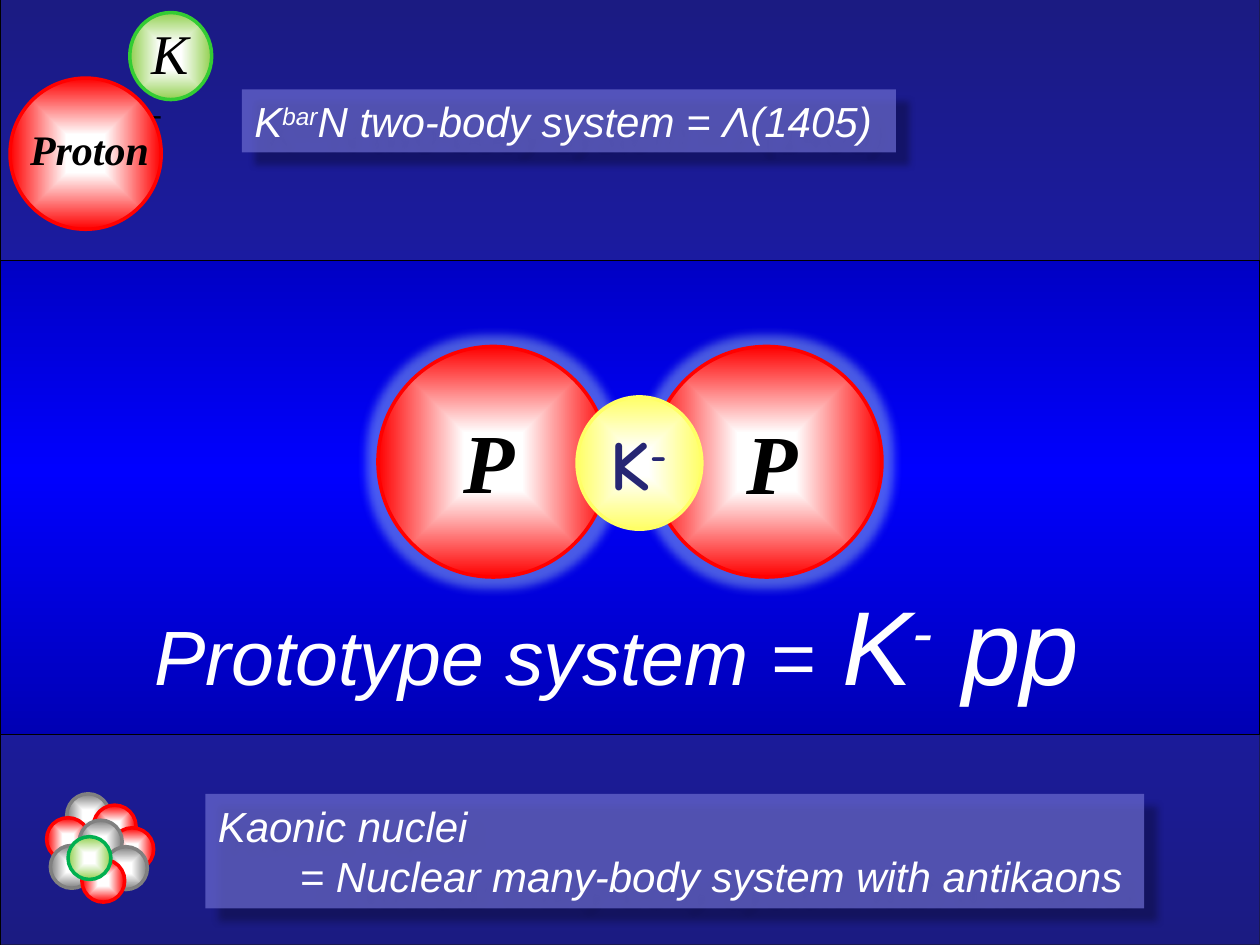
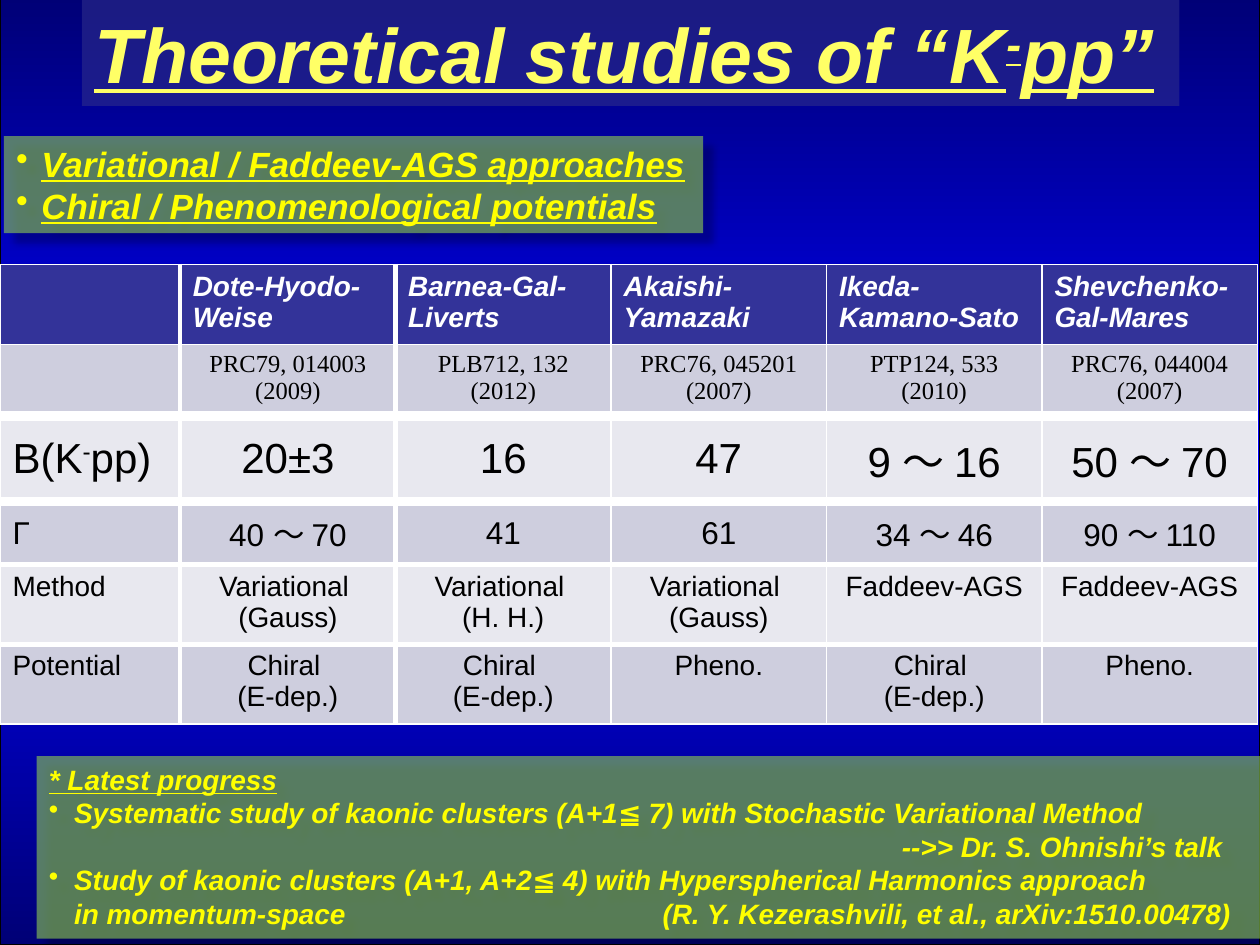
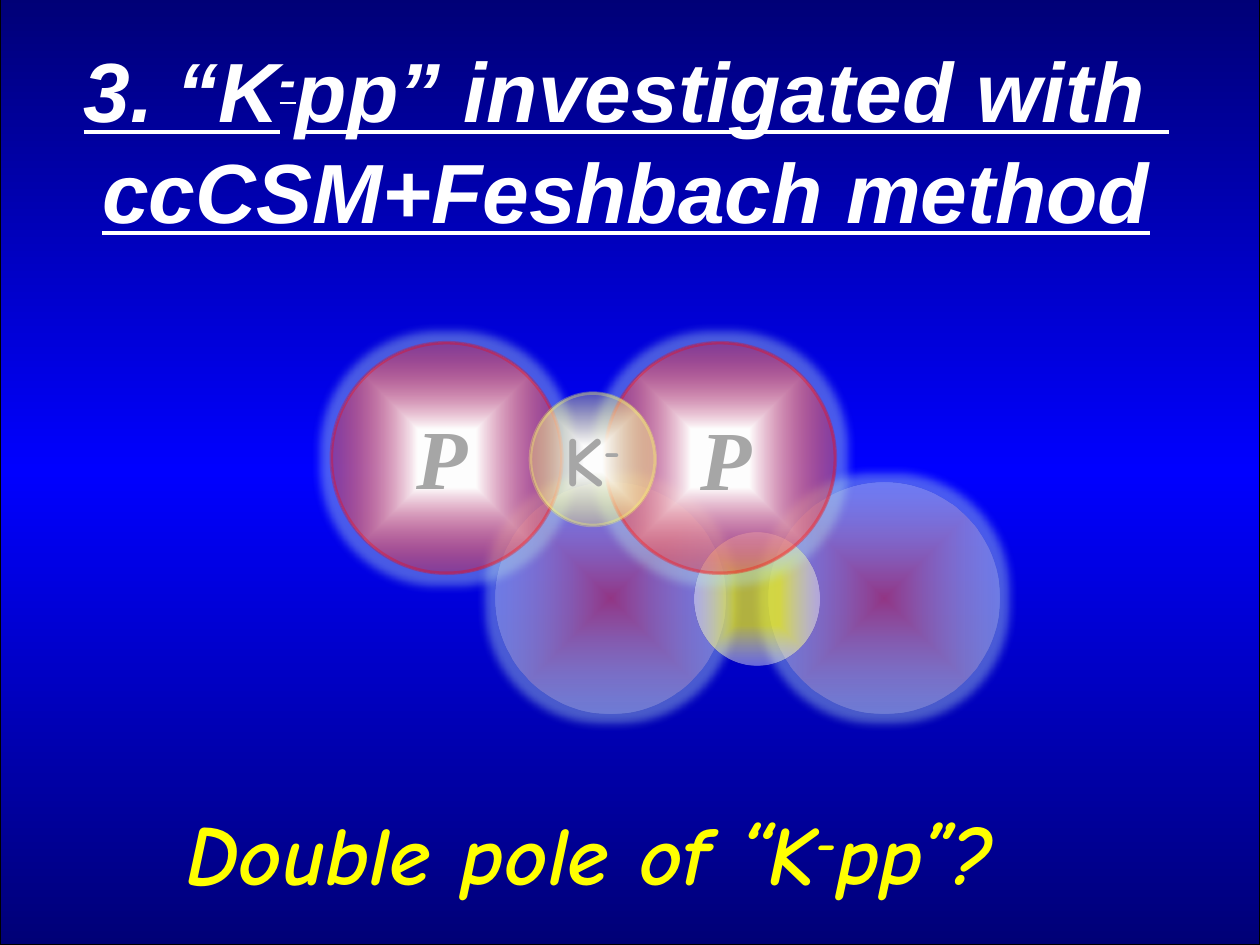
"""Builds three slides on the K-pp system: its place, theory results, double pole."""
from copy import deepcopy

from pptx import Presentation
from pptx.dml.color import RGBColor
from pptx.enum.shapes import MSO_SHAPE
from pptx.enum.text import MSO_ANCHOR, MSO_AUTO_SIZE, PP_ALIGN
from pptx.oxml import parse_xml
from pptx.oxml.ns import nsdecls, qn
from pptx.util import Inches, Pt

RECT, OVAL = MSO_SHAPE.RECTANGLE, MSO_SHAPE.OVAL
TOP, MID = MSO_ANCHOR.TOP, MSO_ANCHOR.MIDDLE
LEFT, MIDDLE = PP_ALIGN.LEFT, PP_ALIGN.CENTER
FIT = MSO_AUTO_SIZE.SHAPE_TO_FIT_TEXT

WIDE, HIGH = 10, 7.5
INK = {
    "black": "000000", "white": "FFFFFF", "deep": "000076", "blue": "0000FF",
    "band": "2D2D8A", "label": "6B6BCF", "note": "92D050", "red": "FF0000",
    "grey": "808080", "lime": "33CC33", "green": "00B050", "pale": "FFFF66",
    "yellow": "FFFF00", "ice": "B8E3E6", "navy": "262673", "dim": "A6A6A6",
    "head": "333399", "dark": "CECEDE", "light": "E8E8EF",
}

SANS = {"name": "Arial", "italic": True, "color": "white"}
LABEL = {**SANS, "size": 24}
TITLE = {**SANS, "size": 44, "bold": True, "underline": True, "color": "pale"}
PART = {**TITLE, "size": 48, "color": "white"}
NOTE = {**SANS, "size": 20, "bold": True, "color": "yellow"}
SMALL = {**NOTE, "size": 16}
SERIF = {"name": "Times New Roman", "italic": True, "color": "black"}
COMIC = {"name": "Comic Neue", "bold": True, "color": "yellow"}
CELL = {"name": "Arial", "color": "black", "size": 16}
LINE = {"underline": True}

BALL = [(25, "white"), (100, "red"), (100, "ice")]
KAON = [(14, "white"), (100, "pale")]
LEAF = [(25, "white"), (100, "note"), (100, "ice")]
STONE = [(25, "white"), (100, "grey"), (100, "ice")]
SOLID = {"ball": BALL, "kaon": KAON, "edge": 100, "ink": ("black", "navy")}
FAINT = {"ball": [(25, "white"), (100, "red", 30), (100, "ice")],
         "kaon": [(14, "white"), (100, "pale", 30)], "edge": 30, "ink": ("dim", "dim")}
GHOST = {"ball": [(0, "red", 40), (100, "white", 20)],
         "kaon": [(35, "yellow", 70), (100, "white", 40)], "edge": None, "ink": None}

CORE = [
    (0.53, 6.3, "grey"), (0.37, 6.49, "red"), (0.74, 6.39, "red"),
    (0.88, 6.57, "red"), (0.63, 6.51, "grey"), (0.4, 6.71, "grey"),
    (0.83, 6.72, "grey"), (0.65, 6.82, "red"), (0.54, 6.64, "green"),
]
SKIN = {"red": BALL, "grey": STONE, "green": LEAF[:2]}

PROTO = [("Prototype system =", {}), (" ", {"size": 54}), ("K^-^ pp", {"size": 60})]
BULLET = {"bullet": "•", "left": 0.2, "hang": -0.2}
IDEAS = [([("Variational / Faddeev-AGS approaches", LINE)], BULLET),
         ([("Chiral / Phenomenological potentials", LINE)], BULLET)]
NEWS = [
    ([("* Latest progress", LINE)], {}),
    ("Systematic study of kaonic clusters (A+1≦ 7) with Stochastic Variational Method"
     "\n\t-->> Dr. S. Ohnishi’s talk", {**BULLET, "tab": 6.77}),
    ("Study of kaonic clusters (A+1, A+2≦ 4) with Hyperspherical Harmonics approach"
     "\nin momentum-space\t(R. Y. Kezerashvili, et al., arXiv:1510.00478)",
     {**BULLET, "tab": 4.87}),
]

GAUSS, CHIRAL = "Variational \n(Gauss)", "Chiral \n(E-dep.)"
ROWS = [
    ["", "Dote-Hyodo-Weise", "Barnea-Gal-Liverts", "Akaishi-Yamazaki",
     "Ikeda-Kamano-Sato", "Shevchenko-Gal-Mares"],
    ["", "PRC79, 014003 (2009)", "PLB712, 132 (2012)", "PRC76, 045201 (2007)",
     "PTP124, 533 (2010)", "PRC76, 044004 (2007)"],
    ["B(K^-^pp)", "20±3", "16", "47", "9 ～ 16", "50 ～ 70"],
    ["Γ", "40 ～ 70", "41", "61", "34 ～ 46", "90 ～ 110"],
    ["Method", GAUSS, "Variational \n(H. H.)", GAUSS, "Faddeev-AGS", "Faddeev-AGS"],
    ["Potential", CHIRAL, CHIRAL, "Pheno.", CHIRAL, "Pheno."],
]
LOOKS = [
    (0.63, "head", TOP, {**SANS, "size": 16, "bold": True}),
    (0.56, "dark", TOP, {**SERIF, "italic": False, "size": 14}),
    (0.68, "light", MID, {**CELL, "size": 24}),
    (0.5, "dark", MID, {**CELL, "size": 18}),
    (0.63, "light", TOP, CELL),
    (0.63, "dark", TOP, CELL),
]
COLS = [1.43] + [1.71] * 5
ACROSS = [1, 0.25, 6, 6, 3, 3, 1]
DOWN = [1, 3, 3, 1, 1, 1, 1]


def tag(name, inner="", **attrs):
    pairs = "".join(f' {key}="{val}"' for key, val in attrs.items())
    return f"<a:{name}{pairs}>{inner}</a:{name}>"


def node(name, inner="", **attrs):
    return parse_xml(tag(name, inner, **attrs).replace(
        f"<a:{name}", f"<a:{name} {nsdecls('a')}", 1))


def tint(color, alpha=100):
    return tag("srgbClr", tag("alpha", val=alpha * 1000), val=INK[color])


def blend(stops, turn=None):
    marks = "".join(tag("gs", tint(*ink), pos=pos * 1000) for pos, *ink in stops)
    if turn is None:
        box = tag("fillToRect", l=50000, t=50000, r=50000, b=50000)
        way = tag("path", box, path="shape")
    else:
        way = tag("lin", ang=turn * 60000, scaled=0)
    return node("gradFill", tag("gsLst", marks) + way, rotWithShape=1)


def shade(dist):
    return node("outerShdw", tint("black", 40), blurRad=Pt(4), dist=Pt(dist),
                dir=45 * 60000, algn="tl", rotWithShape=0)


def glow():
    return node("glow", tint("ice", 40), rad=Pt(11))


def style(run, look):
    for key, val in look.items():
        if key == "color":
            run.font.color.rgb = RGBColor.from_string(INK[val])
        else:
            setattr(run.font, key, Pt(val) if key == "size" else val)


def spread(para, text, look):
    for i, bit in enumerate(text.split("^")):
        for j, line in enumerate(bit.split("\n")):
            if j:
                para.add_line_break()
                last = para._p.findall(qn("a:br"))[-1]
                last.append(deepcopy(para.runs[-1]._r.rPr))
            if line:
                run = para.add_run()
                run.text = line
                style(run, look)
                if i % 2:
                    run._r.rPr.set("baseline", "30000")


def write(frame, paras, look, align=LEFT):
    if isinstance(paras, str):
        paras = [(paras, {})]
    for i, (runs, form) in enumerate(paras):
        para = frame.add_paragraph() if i else frame.paragraphs[0]
        para.alignment = align
        props = para._p.get_or_add_pPr()
        for key, attr in (("left", "marL"), ("hang", "indent")):
            if key in form:
                props.set(attr, str(Inches(form[key])))
        if "bullet" in form:
            props.append(node("buChar", char=form["bullet"]))
        if "tab" in form:
            stop = tag("tab", pos=Inches(form["tab"]), algn="l")
            props.append(node("tabLst", stop))
        for text, more in [(runs, {})] if isinstance(runs, str) else runs:
            spread(para, text, {**look, **more})


def settle(frame, paras, look, align, wrap):
    frame.word_wrap, frame.auto_size, frame.vertical_anchor = wrap, FIT, TOP
    write(frame, paras, look, align)


def words(slide, at, paras, look, align=LEFT, wrap=False):
    box = slide.shapes.add_textbox(*map(Inches, at))
    settle(box.text_frame, paras, look, align, wrap)


def draw(slide, kind, at, fill, edge=None, effect=None, turn=None):
    shape = slide.shapes.add_shape(kind, *map(Inches, at))
    props = shape._element.spPr
    if isinstance(fill, list):
        paint = blend(fill, turn)
    else:
        paint = node("solidFill", tint(*fill))
    shape.fill.background()
    props.replace(props.find(qn("a:noFill")), paint)
    if edge:
        color, width, *alpha = edge
        shape.line.width = Pt(width)
        props.find(qn("a:ln")).append(node("solidFill", tint(color, *alpha)))
    else:
        shape.line.fill.background()
    shape.shadow.inherit = False
    if effect is not None:
        props.find(qn("a:effectLst")).append(effect)
    return shape


def panel(slide, at, fill, paras, look, drop=None, wrap=False):
    shape = draw(slide, RECT, at, fill, effect=shade(drop) if drop else None)
    settle(shape.text_frame, paras, look, LEFT, wrap)


def start(deck):
    slide = deck.slides.add_slide(deck.slide_layouts[6])
    draw(slide, RECT, (0, -0.03, WIDE, HIGH + 0.03),
         [(0, "deep"), (50, "blue"), (100, "deep")], ("black", 1), turn=90)
    return slide


def trio(slide, left, top, mode):
    def rim(color):
        return (color, 2, mode["edge"]) if mode["edge"] else None

    for step, dx, dy in ((0, 0.58, 0.45), (2.17, 0.66, 0.46)):
        x = left + step
        draw(slide, OVAL, (x, top, 1.83, 1.83), mode["ball"], rim("red"), glow())
        if mode["ink"]:
            words(slide, (x + dx, top + dy, 0.61, 0.91), "P",
                  {**SERIF, "size": 48, "bold": True, "color": mode["ink"][0]})
    draw(slide, OVAL, (left + 1.58, top + 0.4, 0.99, 1.05), mode["kaon"], rim("pale"))
    if mode["ink"]:
        words(slide, (left + 1.75, top + 0.54, 0.77, 0.77), "K^-^",
              {**COMIC, "size": 40, "color": mode["ink"][1]})


def grid(slide, at):
    high = sum(look[0] for look in LOOKS)
    table = slide.shapes.add_table(len(ROWS), len(COLS),
                                   *map(Inches, (*at, sum(COLS), high))).table
    table.first_row = table.horz_banding = False
    for col, width in zip(table.columns, COLS):
        col.width = Inches(width)
    for r, (row, (tall, fill, anchor, look)) in enumerate(zip(ROWS, LOOKS)):
        table.rows[r].height = Inches(tall)
        for c, text in enumerate(row):
            cell = table.cell(r, c)
            cell.fill.solid()
            cell.fill.fore_color.rgb = RGBColor.from_string(INK[fill])
            cell.vertical_anchor = anchor
            write(cell.text_frame, text, look, MIDDLE if r and c else LEFT)
            props = cell._tc.get_or_add_tcPr()
            sides = zip("LRTB", (DOWN[c], DOWN[c + 1], ACROSS[r], ACROSS[r + 1]))
            for i, (side, width) in enumerate(sides):
                paint = tag("solidFill", tint("white"))
                props.insert(i, node("ln" + side, paint, w=Pt(width)))


def place(deck):
    slide = start(deck)
    band, rim = ("band", 60), ("black", 0.75)
    draw(slide, RECT, (0, -0.01, 10.33, 2.08), band, rim)
    draw(slide, OVAL, (1.03, 0.1, 0.65, 0.69), LEAF, ("lime", 2))
    words(slide, (1.1, 0.1, 0.42, 0.47), "K^-^", {**SERIF, "size": 32}, wrap=True)
    draw(slide, OVAL, (0.08, 0.62, 1.2, 1.2), BALL, ("red", 2))
    words(slide, (0.14, 0.93, 1.16, 0.5), "Proton", {**SERIF, "size": 24, "bold": True})
    panel(slide, (1.92, 0.71, 5.19, 0.5), ("label", 71),
          "K^bar^N two-body system = Λ(1405)", LABEL, 10)
    draw(slide, RECT, (0, 5.83, 10.33, 2.08), band, rim)
    for x, y, color in CORE:
        draw(slide, OVAL, (x, y, 0.34, 0.34), SKIN[color], (color, 2))
    panel(slide, (1.63, 6.3, 7.45, 0.91), ("label", 71),
          [("Kaonic nuclei", {}),
           ("= Nuclear many-body system with antikaons", {"left": 0.65})], LABEL, 10)
    trio(slide, 3, 2.75, SOLID)
    words(slide, (1.08, 4.56, 7.63, 1.11), [(PROTO, {})], {**SANS, "size": 44}, MIDDLE)


def theory(deck):
    slide = start(deck)
    panel(slide, (0.65, 0, 8.71, 0.84), ("band", 60),
          "Theoretical studies of “K^-^pp”", TITLE)
    grid(slide, (0, 2.1))
    green = ("note", 60)
    panel(slide, (0.03, 1.08, 5.55, 0.77), green, IDEAS, NOTE, 8)
    panel(slide, (0.29, 6, 9.87, 1.45), green, NEWS, SMALL, 8, wrap=True)


def poles(deck):
    slide = start(deck)
    words(slide, (1.38, 6.31, 7.57, 0.91), "Double pole of “K^-^pp”?",
          {**COMIC, "size": 48, "italic": True})
    trio(slide, 3.93, 3.83, GHOST)
    trio(slide, 2.63, 2.72, FAINT)
    words(slide, (0.54, 0.26, 8.86, 1.72),
          "3. “K^-^pp” investigated with \nccCSM+Feshbach method", PART, MIDDLE, True)


def main():
    deck = Presentation()
    deck.slide_width, deck.slide_height = Inches(WIDE), Inches(HIGH)
    for build in (place, theory, poles):
        build(deck)
    deck.save("out.pptx")


if __name__ == "__main__":
    main()
